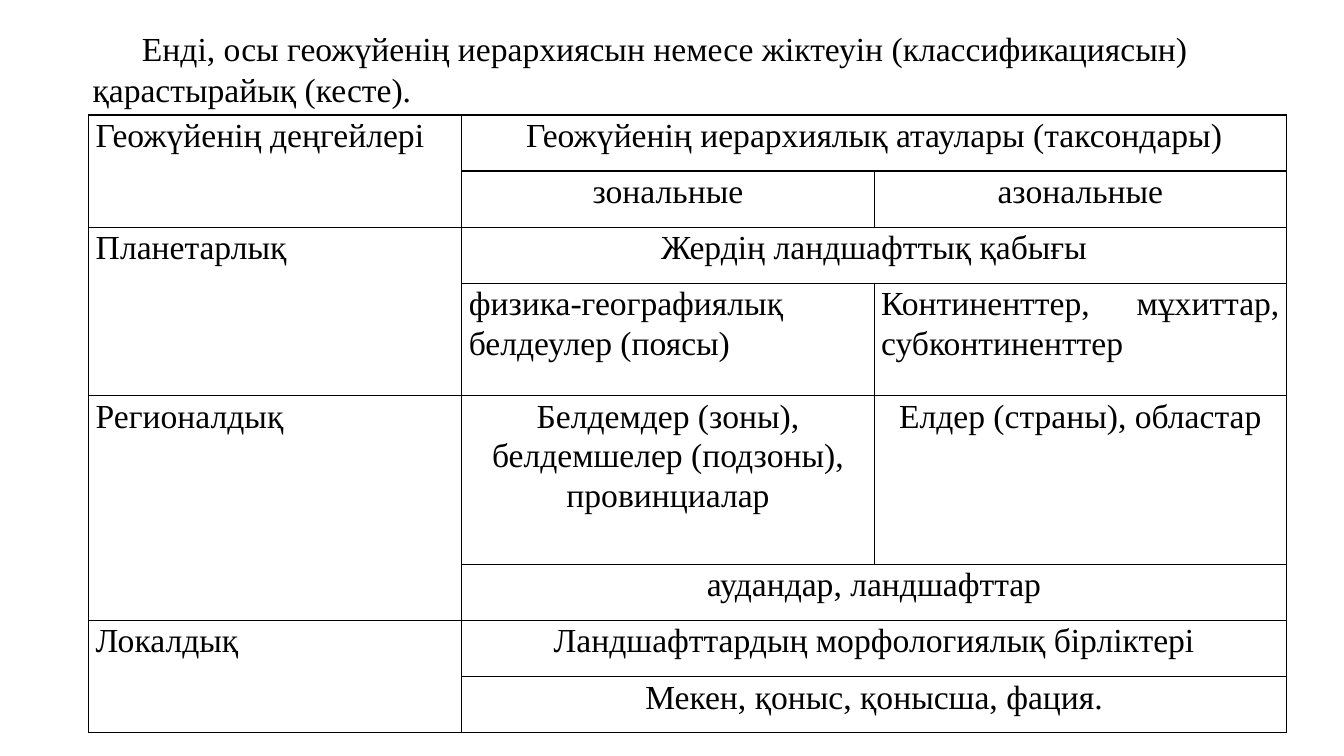
from lxml import etree
from pptx import Presentation
from pptx.dml.color import RGBColor
from pptx.enum.text import MSO_ANCHOR, PP_ALIGN
from pptx.oxml import ns
from pptx.util import Inches, Pt

INK = "000000"
INTRO = ("Енді, осы геожүйенің иерархиясын немесе жіктеуін "
         "(классификациясын) қарастырайық (кесте).")
COL_WIDTHS = [3.7, 4.09, 4.09]
ROW_UNITS = [1, 1, 1, 2, 3, 1, 1, 1]
UNIT = 6.13 / sum(ROW_UNITS)
C, J = PP_ALIGN.CENTER, PP_ALIGN.JUSTIFY

# Each level spans two rows; a row with one taxon spans both columns.
LEVELS = ["Геожүйенің деңгейлері", "Планетарлық", "Регионалдық", "Локалдық"]
TAXA = [
    (C, ["Геожүйенің иерархиялық атаулары (таксондары)"]),
    (C, ["зональные", "азональные"]),
    (C, ["Жердің ландшафттық қабығы"]),
    (J, ["физика-географиялық белдеулер (поясы)",
         "Континенттер, мұхиттар, субконтиненттер"]),
    (C, ["Белдемдер (зоны), белдемшелер (подзоны), провинциалар",
         "Елдер (страны), областар"]),
    (C, ["аудандар, ландшафттар"]),
    (C, ["Ландшафттардың морфологиялық бірліктері"]),
    (C, ["Мекен, қоныс, қонысша, фация."]),
]


def rgb(color):
    return RGBColor.from_string(color)


def style_text(p):
    p.font.name = "Times New Roman"
    p.font.size = Pt(24)
    p.font.color.rgb = rgb(INK)


def set_borders(cell, color, width):
    tcPr = cell._tc.get_or_add_tcPr()
    for i, side in enumerate(("lnL", "lnR", "lnT", "lnB")):
        ln = etree.Element(ns.qn(f"a:{side}"), w=str(Pt(width)))
        fill = etree.SubElement(ln, ns.qn("a:solidFill"))
        etree.SubElement(fill, ns.qn("a:srgbClr"), val=color)
        tcPr.insert(i, ln)


def fill_cell(cell, content, align):
    p = cell.text_frame.paragraphs[0]
    p.text = content
    p.alignment = align
    p.line_spacing = 1.07
    style_text(p)


def add_intro(slide):
    sp = slide.shapes.add_textbox(Inches(0.82), Inches(0.2), Inches(11.76), Inches(1.21))
    tf = sp.text_frame
    tf.word_wrap = True
    tf.vertical_anchor = MSO_ANCHOR.TOP
    tf.margin_top = Inches(0.08)
    p = tf.paragraphs[0]
    p.text = INTRO
    p._p.get_or_add_pPr().set("indent", str(Inches(0.49)))
    style_text(p)


def add_hierarchy_table(slide):
    frame = slide.shapes.add_table(
        len(ROW_UNITS), len(COL_WIDTHS), Inches(0.88), Inches(1.14),
        Inches(sum(COL_WIDTHS)), Inches(UNIT * sum(ROW_UNITS)))
    table = frame.table
    table.first_row = table.horz_banding = False
    for col, width in zip(table.columns, COL_WIDTHS):
        col.width = Inches(width)
    for row, units in zip(table.rows, ROW_UNITS):
        row.height = Inches(UNIT * units)
    for cell in table.iter_cells():
        cell.margin_left = cell.margin_right = Inches(0.07)
        cell.margin_top = cell.margin_bottom = 0
        cell.fill.background()
        set_borders(cell, INK, 1)

    for i, level in enumerate(LEVELS):
        cell = table.cell(2 * i, 0)
        cell.merge(table.cell(2 * i + 1, 0))
        fill_cell(cell, level, J)
    for r, (align, names) in enumerate(TAXA):
        if len(names) == 1:
            table.cell(r, 1).merge(table.cell(r, 2))
        for c, name in enumerate(names, 1):
            fill_cell(table.cell(r, c), name, align)


def main():
    prs = Presentation()
    prs.slide_width, prs.slide_height = Inches(13.33), Inches(7.5)
    slide = prs.slides.add_slide(prs.slide_layouts[6])
    add_hierarchy_table(slide)
    add_intro(slide)
    prs.save("out.pptx")


if __name__ == "__main__":
    main()
